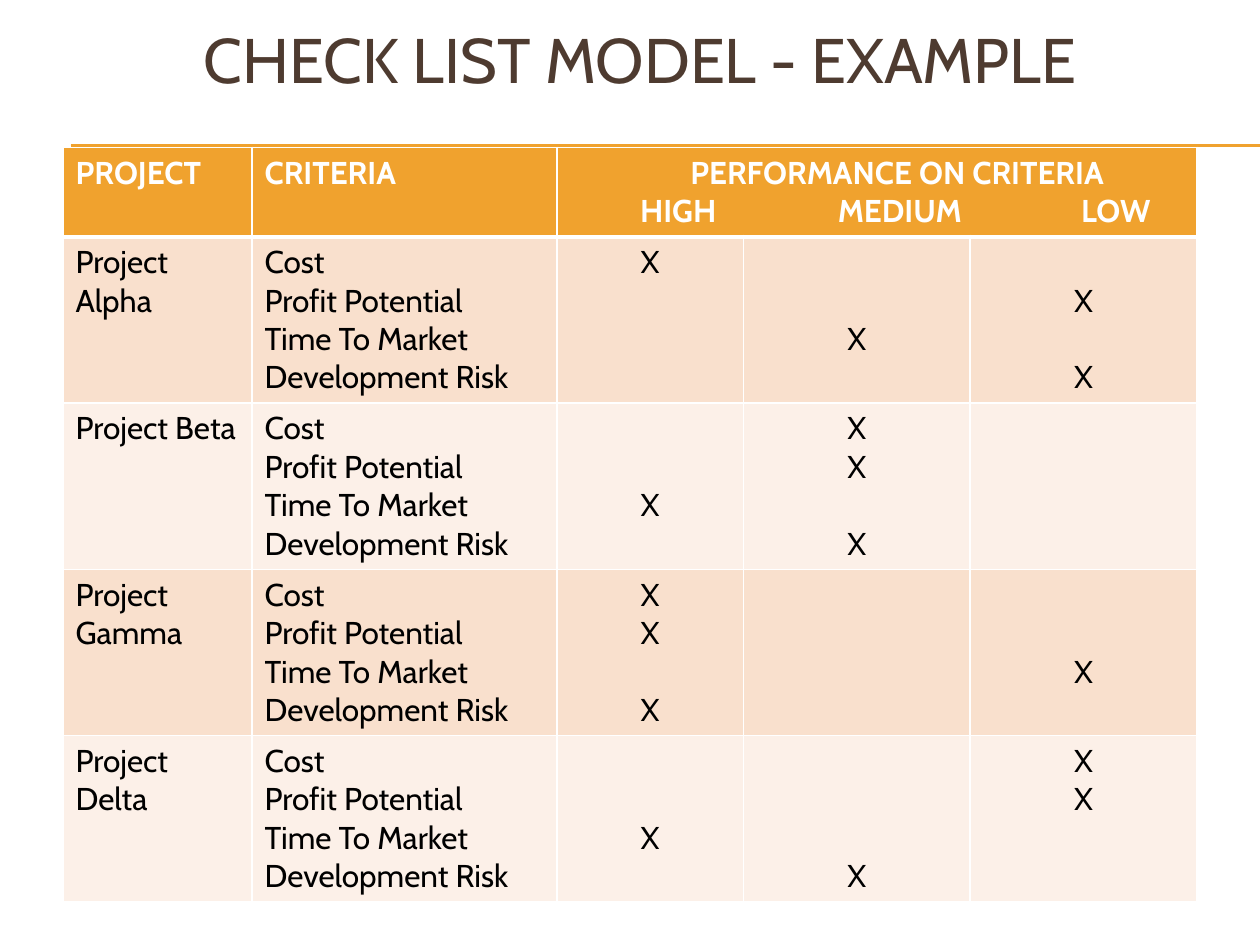
from dataclasses import dataclass

from lxml import etree
from pptx import Presentation
from pptx import util as u
from pptx.dml.color import RGBColor
from pptx.enum import shapes, text
from pptx.oxml import ns


@dataclass(frozen=True)
class Theme:
    font: str = "Cabin"
    accent: str = "F0A22E"
    title: str = "4E3B30"
    body: str = "000000"
    white: str = "FFFFFF"
    bands: tuple[str, ...] = ("F9E0CD", "FCF0E8")
    title_pt: int = 36
    body_pt: int = 18
    line_in: float = 0.305
    margin_in: float = 0.05


@dataclass(frozen=True)
class Project:
    name: str
    ratings: str


T = Theme()
CRITERIA = ("Cost", "Profit Potential", "Time To Market", "Development Risk")
LEVELS = "HML"
PROJECTS = (
    Project("Project Alpha", "HLML"),
    Project("Project Beta", "MMHM"),
    Project("Project Gamma", "HHLH"),
    Project("Project Delta", "LLHM"),
)
COLUMNS = (1.5, 2.42, 1.48, 1.8, 1.8)


def write(tf, words: str, *, size: int = T.body_pt, color: str = T.body, bold: bool = False,
          align=text.PP_ALIGN.LEFT, before: float = 0, tabs: tuple[float, ...] = ()) -> None:
    p = tf.paragraphs[0]
    if p.runs:
        p = tf.add_paragraph()
        p.space_before = u.Inches(before)
    p.alignment = align
    if tabs:
        stops = etree.SubElement(p._p.get_or_add_pPr(), ns.qn("a:tabLst"))
        for pos in tabs:
            etree.SubElement(stops, ns.qn("a:tab"), pos=str(u.Inches(pos)), algn="l")
    r = p.add_run()
    r.text = words
    r.font.name, r.font.size, r.font.bold = T.font, u.Pt(size), bold
    r.font.color.rgb = RGBColor.from_string(color)


def style_cell(cell, fill: str, top: float = 1, bottom: float = 1) -> None:
    tc_pr = cell._tc.get_or_add_tcPr()
    for side, width in (("L", 1), ("R", 1), ("T", top), ("B", bottom)):
        ln = etree.SubElement(tc_pr, ns.qn(f"a:ln{side}"), w=str(u.Pt(width)))
        solid = etree.SubElement(ln, ns.qn("a:solidFill"))
        etree.SubElement(solid, ns.qn("a:srgbClr"), val=T.white)
    cell.fill.solid()
    cell.fill.fore_color.rgb = RGBColor.from_string(fill)


def mark_cell(cell, rows: list[int]) -> None:
    """Put an X on each given line of the cell, using margin and spacing for the gaps."""
    if not rows:
        return
    cell.margin_top = u.Inches(T.margin_in + rows[0] * T.line_in)
    for prev, row in zip([rows[0] - 1] + rows, rows):
        write(cell.text_frame, "X", align=text.PP_ALIGN.CENTER, before=(row - prev - 1) * T.line_in)


def add_rule(s, y: float) -> None:
    sp = s.shapes.add_connector(shapes.MSO_CONNECTOR.STRAIGHT,
                                u.Inches(0.56), u.Inches(y), u.Inches(10), u.Inches(y))
    sp.line.color.rgb = RGBColor.from_string(T.accent)
    sp.line.width = u.Pt(0.75)
    etree.SubElement(sp._element.spPr, ns.qn("a:effectLst"))


def add_title(s, words: str) -> None:
    sp = s.shapes.add_textbox(u.Inches(0.33), u.Inches(0), u.Inches(9.5), u.Inches(0.92))
    tf = sp.text_frame
    tf.word_wrap = True
    tf.vertical_anchor = text.MSO_ANCHOR.MIDDLE
    write(tf, words, size=T.title_pt, color=T.title, align=text.PP_ALIGN.CENTER)


def add_checklist(s) -> None:
    heights = [n * T.line_in + 2 * T.margin_in for n in [2] + [len(CRITERIA)] * len(PROJECTS)]
    table = s.shapes.add_table(len(heights), len(COLUMNS), u.Inches(0.5), u.Inches(1.17),
                               u.Inches(sum(COLUMNS)), u.Inches(sum(heights))).table
    for column, width in zip(table.columns, COLUMNS):
        column.width = u.Inches(width)
    for row, height in zip(table.rows, heights):
        row.height = u.Inches(height)

    for cell in table.rows[0].cells:
        style_cell(cell, T.accent, bottom=3)
    table.cell(0, 2).merge(table.cell(0, 4))
    headings = (
        (0, "PROJECT", ()),
        (1, "CRITERIA", ()),
        (2, "\tPERFORMANCE ON CRITERIA", (0.96,)),
        (2, "\tHIGH\tMEDIUM\tLOW", (0.56, 2.13, 4.06)),
    )
    for col, words, tabs in headings:
        write(table.cell(0, col).text_frame, words, color=T.white, bold=True, tabs=tabs)

    for i, project in enumerate(PROJECTS):
        cells = list(table.rows[i + 1].cells)
        for cell in cells:
            style_cell(cell, T.bands[i % 2], top=1 if i else 3)
        write(cells[0].text_frame, project.name)
        for criterion in CRITERIA:
            write(cells[1].text_frame, criterion)
        for cell, level in zip(cells[2:], LEVELS):
            mark_cell(cell, [n for n, rating in enumerate(project.ratings) if rating == level])


def main() -> None:
    prs = Presentation()
    prs.slide_width, prs.slide_height = u.Inches(10), u.Inches(7.5)
    s = prs.slides.add_slide(prs.slide_layouts[6])
    for y in (1.15, 1.16):
        add_rule(s, y)
    add_title(s, "CHECK LIST MODEL - EXAMPLE")
    add_checklist(s)
    prs.save("out.pptx")


if __name__ == "__main__":
    main()
